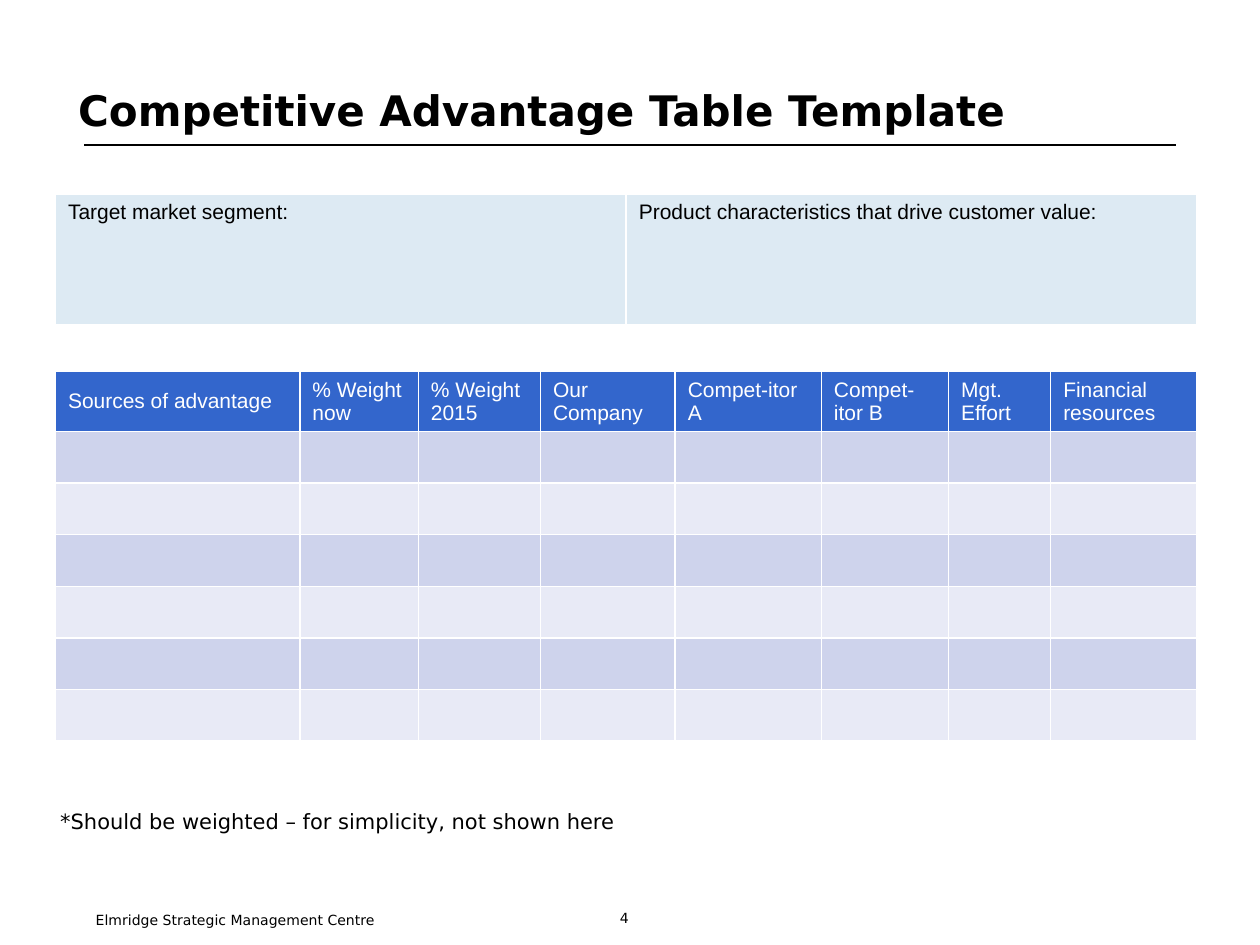
import pptx
import pptx.util
import pptx.dml.color
import pptx.enum.shapes
import pptx.enum.text
import pptx.oxml.ns
import lxml.etree

ALIGN = pptx.enum.text.PP_ALIGN
ANCHOR = pptx.enum.text.MSO_ANCHOR
INCH = pptx.util.Inches
SANS = "DejaVu Sans"

TITLE = "Competitive Advantage Table Template"
BRIEF = ["Target market segment:",
         "Product characteristics that drive customer value:"]
HEADS = [("Sources of advantage", 1.94), ("% Weight now", 0.94),
         ("% Weight 2015", 0.97), ("Our Company", 1.07),
         ("Compet-itor A", 1.16), ("Compet-itor B", 1.01),
         ("Mgt. Effort", 0.81), ("Financial resources", 1.16)]
BLANKS = 6
NOTE = "*Should be weighted – for simplicity, not shown here"
FOOT = "Elmridge Strategic Management Centre"
PAGE = "4"

LEFT = 0.44
WIDTH = sum(wide for _, wide in HEADS)
BANDS = ["CED3EC", "E8EAF6"]


def rgb(code):
    return pptx.dml.color.RGBColor.from_string(code)


def write(frame, text, size, face=SANS, color="000000", bold=False, align=ALIGN.LEFT):
    para = frame.paragraphs[0]
    para.alignment = align
    run = para.add_run()
    run.text = text
    run.font.size = pptx.util.Pt(size)
    run.font.name = face
    run.font.bold = bold
    run.font.color.rgb = rgb(color)


def label(slide, box, text, size, pad=0.0, anchor=ANCHOR.TOP, align=ALIGN.LEFT):
    frame = slide.shapes.add_textbox(*map(INCH, box)).text_frame
    frame.word_wrap = True
    frame.vertical_anchor = anchor
    frame.margin_left = frame.margin_right = INCH(pad)
    frame.margin_top = frame.margin_bottom = INCH(pad / 2)
    write(frame, text, size, align=align)


def edge(cell):
    """Give the cell white one-point borders, placed before its fill."""
    props = cell._tc.get_or_add_tcPr()
    for spot, side in enumerate(["lnL", "lnR", "lnT", "lnB"]):
        line = lxml.etree.Element(pptx.oxml.ns.qn("a:" + side), w="12700")
        fill = lxml.etree.SubElement(line, pptx.oxml.ns.qn("a:solidFill"))
        lxml.etree.SubElement(fill, pptx.oxml.ns.qn("a:srgbClr"), val="FFFFFF")
        props.insert(spot, line)


def grid(slide, top, wides, highs, fills):
    """Add a table with one fill per row."""
    table = slide.shapes.add_table(
        len(highs), len(wides), INCH(LEFT), INCH(top),
        INCH(sum(wides)), INCH(sum(highs))).table
    for col, wide in zip(table.columns, wides):
        col.width = INCH(wide)
    for row, high, fill in zip(table.rows, highs, fills):
        row.height = INCH(high)
        for cell in row.cells:
            cell.fill.solid()
            cell.fill.fore_color.rgb = rgb(fill)
            edge(cell)
    return table


def main():
    deck = pptx.Presentation()
    deck.slide_width, deck.slide_height = INCH(10), INCH(7.5)
    slide = deck.slides.add_slide(deck.slide_layouts[5])

    title = slide.shapes.title
    title.left, title.top, title.width, title.height = map(INCH, (0.52, 0.44, 8.89, 0.86))
    title.text_frame.vertical_anchor = ANCHOR.MIDDLE
    write(title.text_frame, TITLE, 24, bold=True)

    rule = slide.shapes.add_connector(
        pptx.enum.shapes.MSO_CONNECTOR.STRAIGHT,
        *map(INCH, (0.67, 1.15, 9.33, 1.15)))
    rule.line.color.rgb = rgb("000000")
    rule.line.width = pptx.util.Pt(1)
    lxml.etree.SubElement(rule._element.spPr, pptx.oxml.ns.qn("a:effectLst"))

    brief = grid(slide, 1.54, [WIDTH / len(BRIEF)] * len(BRIEF), [1.04], ["DDEAF3"])
    for col, text in enumerate(BRIEF):
        write(brief.cell(0, col).text_frame, text, 12, "Arial")

    fills = ["3366CC"] + [BANDS[row % 2] for row in range(BLANKS)]
    main_grid = grid(slide, 2.95, [wide for _, wide in HEADS],
                     [0.46] + [0.41] * BLANKS, fills)
    for col, (text, _) in enumerate(HEADS):
        cell = main_grid.cell(0, col)
        cell.vertical_anchor = ANCHOR.MIDDLE
        write(cell.text_frame, text, 12, "Arial", "FFFFFF")

    label(slide, (0.38, 6.37, 5.2, 0.31), NOTE, 12, pad=0.1)
    label(slide, (0.76, 7.13, 3.5, 0.24), FOOT, 8, anchor=ANCHOR.BOTTOM)
    label(slide, (4.29, 7.22, 1.33, 0.28), PAGE, 8, align=ALIGN.CENTER)
    deck.save("out.pptx")


if __name__ == "__main__":
    main()
